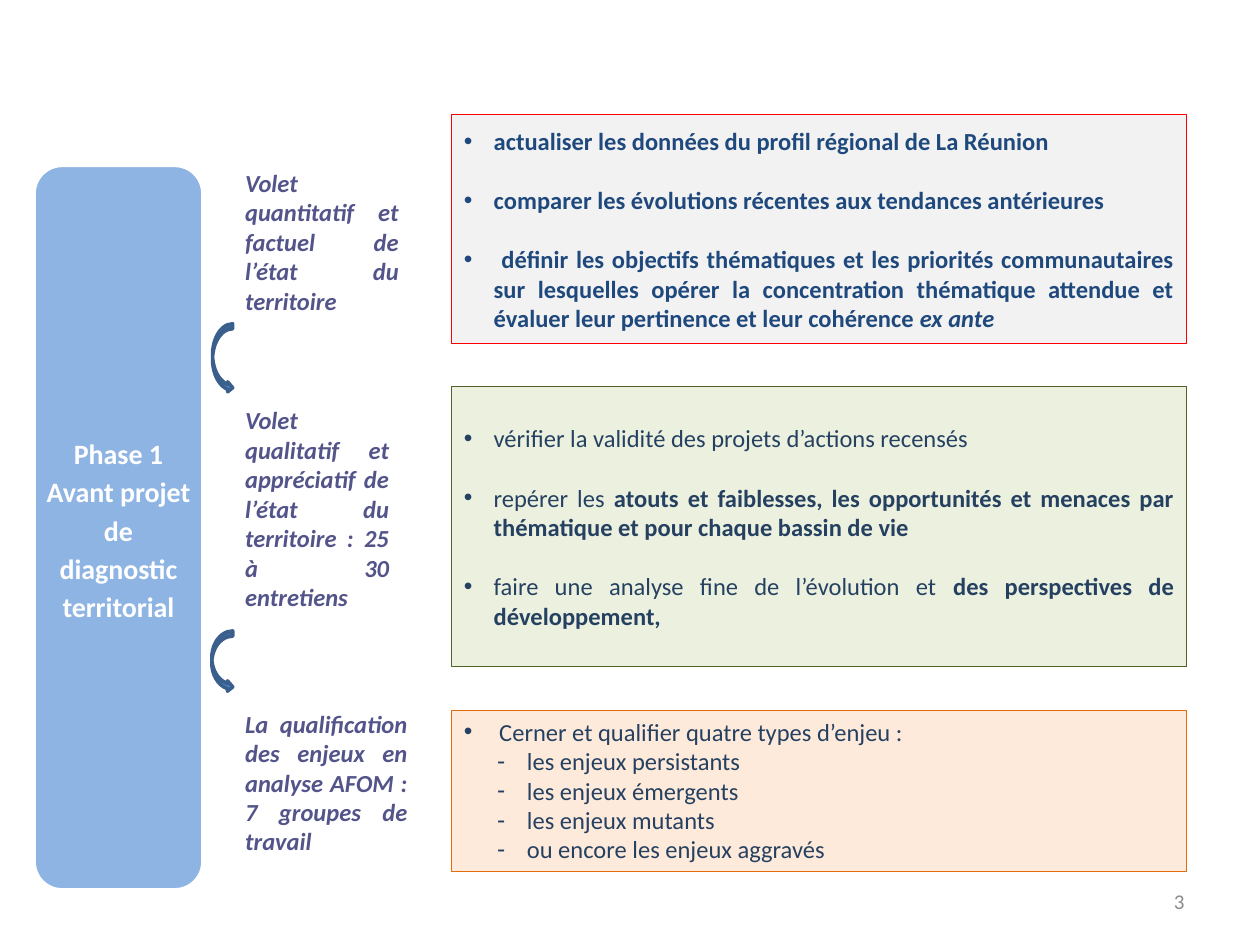
from lxml.etree import SubElement
from pptx import Presentation
from pptx.dml.color import RGBColor
from pptx.enum.shapes import MSO_SHAPE as SHAPE
from pptx.enum.text import MSO_ANCHOR as ANCHOR, PP_ALIGN as ALIGN
from pptx.oxml.ns import qn
from pptx.util import Pt

PHASE = ["Phase 1", "Avant projet de diagnostic territorial"]
STRANDS = [
    ("Volet quantitatif et factuel de l’état du territoire", (92, 102, 92)),
    ("Volet qualitatif et appréciatif de l’état du territoire : 25 à 30 entretiens",
     (227.5, 96.5, 126)),
    ("La qualification des enjeux en analyse AFOM : 7 groupes de travail",
     (401, 107, 92)),
]
ARROWS = [(121.5, 185, 11.5, 39.5), (121, 360.5, 12, 35)]
GOALS = [
    dict(top=65.5, height=131, fill="F2F2F2", line="FF0000", color="1F497D",
         gap=17, anchor=ANCHOR.MIDDLE, items=[
             [("actualiser les données du profil régional de La Réunion", "b")],
             [("comparer les évolutions récentes aux tendances antérieures", "b")],
             [(" définir les objectifs thématiques et les priorités communautaires "
               "sur lesquelles opérer la concentration thématique attendue et "
               "évaluer leur pertinence et leur cohérence ", "b"), ("ex ante", "bi")],
         ]),
    dict(top=221, height=160, fill="EBF1DE", line="4F6228", color="254061",
         gap=17, anchor=ANCHOR.MIDDLE, items=[
             [("vérifier la validité des projets d’actions recensés", "")],
             [("repérer les ", ""),
              ("atouts et faiblesses, les opportunités et menaces par thématique "
               "et pour chaque bassin de vie", "b")],
             [("faire une analyse fine de l’évolution et ", ""),
              ("des perspectives de développement,", "b")],
         ]),
    dict(top=406, height=92, fill="FDEADA", line="E46C0A", color="254061",
         gap=0, anchor=ANCHOR.TOP, items=[
             [(" Cerner et qualifier quatre types d’enjeu :", "")],
         ], subitems=[
             [("les enjeux persistants", "")],
             [("les enjeux émergents", "")],
             [("les enjeux mutants", "")],
             [("ou encore les enjeux aggravés", "")],
         ]),
]
STRAND_LEFT = 133
GOAL_LEFT, GOAL_WIDTH = 258, 420
HANGING = 17


def rgb(value):
    return RGBColor.from_string(value)


def add_box(slide, kind, box, fill, line, weight):
    sp = slide.shapes.add_shape(kind, *map(Pt, box))
    sp.shadow.inherit = False
    sp.fill.solid()
    sp.fill.fore_color.rgb = rgb(fill)
    sp.line.color.rgb = rgb(line)
    sp.line.width = Pt(weight)
    return sp


def set_bullet(p, char, margin):
    pPr = p._p.get_or_add_pPr()
    pPr.set("marL", str(Pt(margin)))
    pPr.set("indent", str(-Pt(HANGING)))
    SubElement(pPr, qn("a:buFont")).set("typeface", "Arial")
    SubElement(pPr, qn("a:buChar")).set("char", char)


def write(sp, paragraphs, size=14, color="FFFFFF", align=ALIGN.JUSTIFY,
          anchor=ANCHOR.MIDDLE, spacing=None, gap=0, bullets=None):
    tf = sp.text_frame
    tf.word_wrap = True
    tf.vertical_anchor = anchor
    for i, runs in enumerate(paragraphs):
        p = tf.add_paragraph() if i else tf.paragraphs[0]
        p.alignment = align
        if spacing:
            p.line_spacing = spacing
        if i and gap:
            p.space_before = Pt(gap)
        if bullets:
            set_bullet(p, *bullets[i])
        for text, style in runs:
            r = p.add_run()
            r.text = text
            r.font.name = "Calibri"
            r.font.size = Pt(size)
            r.font.bold = "b" in style
            r.font.italic = "i" in style
            r.font.color.rgb = rgb(color)


def add_text(slide, box, paragraphs, **fmt):
    write(slide.shapes.add_textbox(*map(Pt, box)), paragraphs, **fmt)


def main():
    prs = Presentation()
    prs.slide_width, prs.slide_height = Pt(720), Pt(540)
    slide = prs.slides.add_slide(prs.slide_layouts[6])

    phase = add_box(slide, SHAPE.ROUNDED_RECTANGLE, (19.5, 94.5, 96.5, 414),
                    "8EB4E3", "FFFFFF", 2)
    phase.text_frame.margin_left = phase.text_frame.margin_right = Pt(1)
    write(phase, [[(text, "b")] for text in PHASE], size=16,
          align=ALIGN.CENTER, spacing=1.14)

    for text, (top, width, height) in STRANDS:
        add_text(slide, (STRAND_LEFT, top, width, height), [[(text, "bi")]],
                 color="53548A")

    for box in ARROWS:
        add_box(slide, SHAPE.CURVED_RIGHT_ARROW, box, "4F81BD", "3A5F8C", 2)

    for goal in GOALS:
        items, subitems = goal["items"], goal.get("subitems", [])
        sp = add_box(slide, SHAPE.RECTANGLE,
                     (GOAL_LEFT, goal["top"], GOAL_WIDTH, goal["height"]),
                     goal["fill"], goal["line"], 0.75)
        write(sp, items + subitems, color=goal["color"], anchor=goal["anchor"],
              gap=goal["gap"],
              bullets=[("•", HANGING)] * len(items) + [("-", 36)] * len(subitems))

    add_text(slide, (516, 500.5, 168, 29), [[("3", "")]], size=12,
             color="8C8C8C", align=ALIGN.RIGHT)
    prs.save("out.pptx")


if __name__ == "__main__":
    main()
